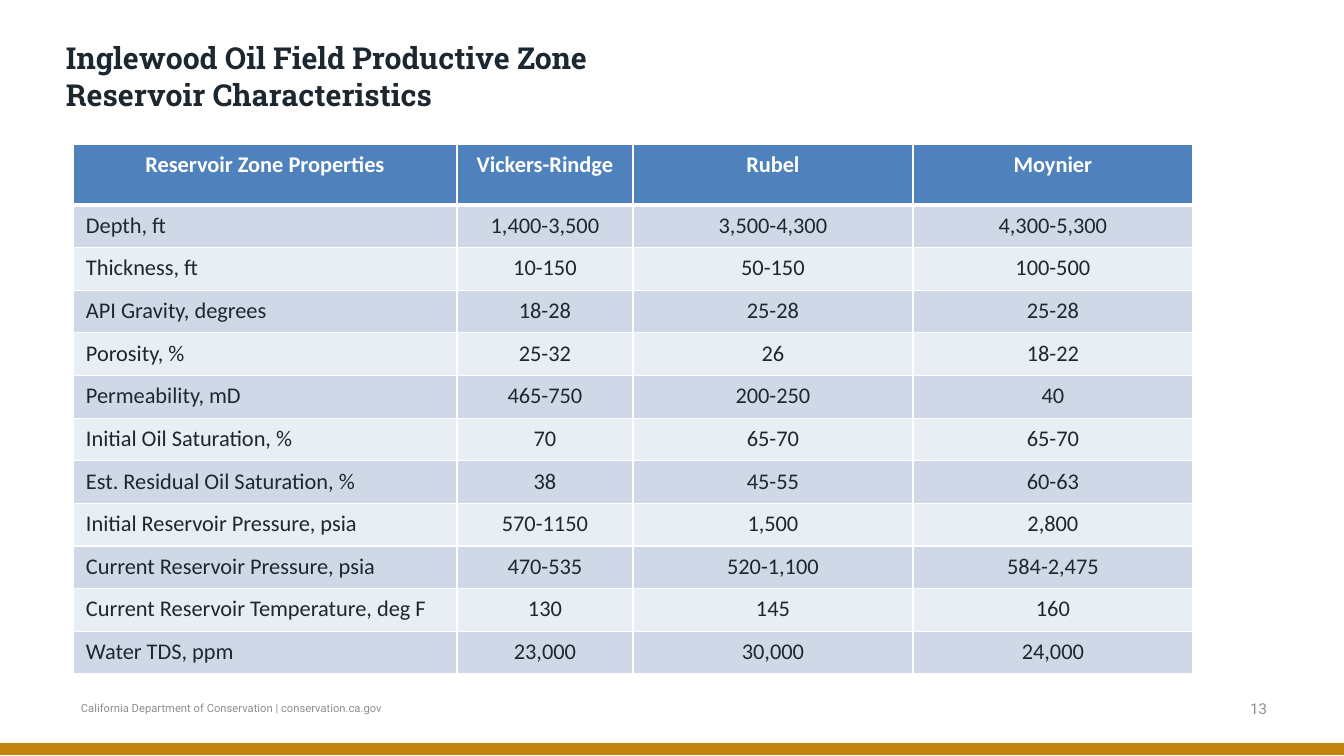
"""Build the slide of Inglewood Oil Field reservoir characteristics."""
import pptx
import pptx.dml.color
import pptx.enum.shapes
import pptx.enum.text
import pptx.oxml.ns
import pptx.util
from lxml import etree

RGBColor = pptx.dml.color.RGBColor
PP_ALIGN = pptx.enum.text.PP_ALIGN
qn = pptx.oxml.ns.qn

INK = RGBColor(0x1D, 0x27, 0x30)
GREY = RGBColor(0x8D, 0x8E, 0x8F)
WHITE = RGBColor(0xFF, 0xFF, 0xFF)
GOLD = RGBColor(0xC4, 0x82, 0x0E)
HEAD_BLUE = RGBColor(0x4F, 0x81, 0xBD)
BANDS = (RGBColor(0xD0, 0xD8, 0xE8), RGBColor(0xE9, 0xED, 0xF4))

EMU_PER_PX = 914400 / 100.8
COL_WIDTHS = (384, 176, 280, 280)
HEAD_HEIGHT = 61
BODY_HEIGHT = 469

ZONES = (
    ("Reservoir Zone Properties", "Vickers-Rindge", "Rubel", "Moynier"),
    ("Depth, ft", "1,400-3,500", "3,500-4,300", "4,300-5,300"),
    ("Thickness, ft", "10-150", "50-150", "100-500"),
    ("API Gravity, degrees", "18-28", "25-28", "25-28"),
    ("Porosity, %", "25-32", "26", "18-22"),
    ("Permeability, mD", "465-750", "200-250", "40"),
    ("Initial Oil Saturation, %", "70", "65-70", "65-70"),
    ("Est. Residual Oil Saturation, %", "38", "45-55", "60-63"),
    ("Initial Reservoir Pressure, psia", "570-1150", "1,500", "2,800"),
    ("Current Reservoir Pressure, psia", "470-535", "520-1,100", "584-2,475"),
    ("Current Reservoir Temperature, deg F", "130", "145", "160"),
    ("Water TDS, ppm", "23,000", "30,000", "24,000"),
)


def px(n):
    return pptx.util.Emu(round(n * EMU_PER_PX))


def add_run(p, text, font, size, color, bold=False):
    r = p.add_run()
    r.text = text
    r.font.name = font
    r.font.size = pptx.util.Pt(size)
    r.font.color.rgb = color
    r.font.bold = bold


def set_margins(obj, x, y):
    obj.margin_left = obj.margin_right = px(x)
    obj.margin_top = obj.margin_bottom = px(y)


def add_text(s, box, margins, lines, font, size, color,
             bold=False, align=PP_ALIGN.LEFT):
    tf = s.shapes.add_textbox(*map(px, box)).text_frame
    tf.word_wrap = True
    tf.vertical_anchor = pptx.enum.text.MSO_ANCHOR.MIDDLE
    set_margins(tf, *margins)
    p = tf.paragraphs[0]
    p.alignment = align
    for i, line in enumerate(lines):
        if i:
            p.add_line_break()
        add_run(p, line, font, size, color, bold)


def add_rule(s, x1, y1, x2, y2, color, width):
    kind = pptx.enum.shapes.MSO_CONNECTOR.STRAIGHT
    sp = s.shapes.add_connector(kind, *map(px, (x1, y1, x2, y2)))
    sp.line.color.rgb = color
    sp.line.width = pptx.util.Pt(width)
    etree.SubElement(sp._element.spPr, qn("a:effectLst"))


def set_borders(cell, color, widths):
    tcPr = cell._tc.get_or_add_tcPr()
    for i, (side, width) in enumerate(widths.items()):
        ln = etree.Element(qn("a:ln" + side), w=str(pptx.util.Pt(width)))
        fill = etree.SubElement(ln, qn("a:solidFill"))
        etree.SubElement(fill, qn("a:srgbClr"), val=str(color))
        tcPr.insert(i, ln)


def fill_cell(cell, text, row, col):
    head = row == 0
    set_margins(cell, 13, 7)
    cell.fill.solid()
    cell.fill.fore_color.rgb = HEAD_BLUE if head else BANDS[(row - 1) % 2]
    set_borders(cell, WHITE, {"L": 1, "R": 1, "T": 3 if row == 1 else 1,
                              "B": 3 if head else 1})
    p = cell.text_frame.paragraphs[0]
    p.alignment = PP_ALIGN.CENTER if head or col else PP_ALIGN.LEFT
    add_run(p, text, "Calibri", 16, WHITE if head else INK, head)


def add_zone_table(s, x, y):
    size = (sum(COL_WIDTHS), HEAD_HEIGHT + BODY_HEIGHT)
    frame = s.shapes.add_table(len(ZONES), len(COL_WIDTHS),
                               *map(px, (x, y, *size)))
    table = frame.table
    table.first_row = table.horz_banding = False
    for col, width in zip(table.columns, COL_WIDTHS):
        col.width = px(width)
    for i, values in enumerate(ZONES):
        table.rows[i].height = px(BODY_HEIGHT / (len(ZONES) - 1) if i
                                  else HEAD_HEIGHT)
        for j, text in enumerate(values):
            fill_cell(table.cell(i, j), text, i, j)


def main():
    prs = pptx.Presentation()
    prs.slide_width, prs.slide_height = px(1344), px(756)
    s = prs.slides.add_slide(prs.slide_layouts[6])
    add_text(s, (68, 674, 576, 68), (13, 7),
             ["California Department of Conservation | conservation.ca.gov"],
             "Roboto", 8, GREY)
    add_rule(s, 1344, 749, 0, 749, GOLD, 8)
    add_text(s, (66, 50, 1192, 52), (0, 0),
             ["Inglewood Oil Field Productive Zone ",
              "Reservoir Characteristics"],
             "Roboto Slab", 21.6, INK, bold=True)
    add_text(s, (964, 674, 313, 68), (10, 5), ["13"],
             "Roboto", 10.7, GREY, align=PP_ALIGN.RIGHT)
    add_zone_table(s, 73, 144)
    prs.save("out.pptx")


if __name__ == "__main__":
    main()
